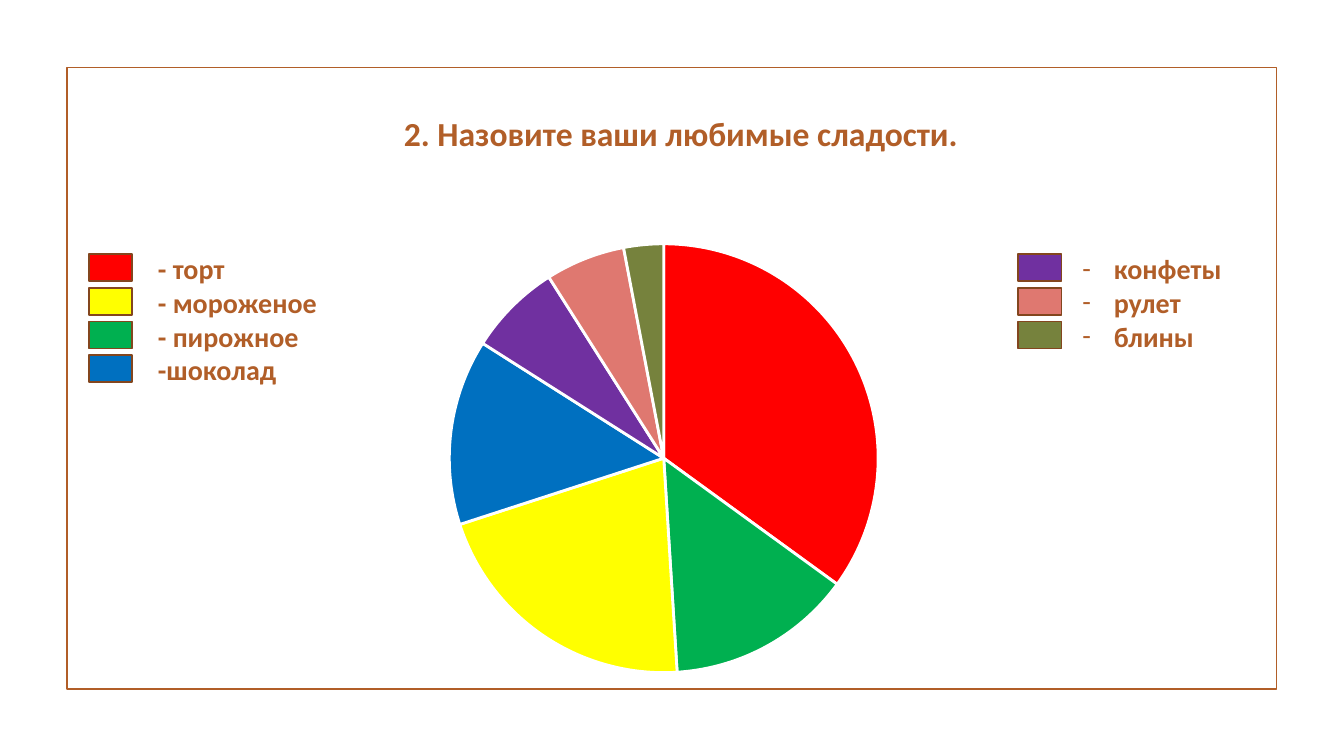
from dataclasses import dataclass
from lxml import etree
from pptx import Presentation
from pptx import util as u
from pptx.chart import data as cd
from pptx.dml import color as col
from pptx.enum import chart as ec, shapes as es, text as et
from pptx.oxml import ns

Pt = u.Pt


@dataclass
class Theme:
    font: str = "Calibri"
    ink: str = "B15E28"
    edge: str = "83461E"
    gap: str = "FFFFFF"
    label: str = "000000"
    head: int = 24
    body: int = 20
    small: int = 10
    line: float = 1.25
    slice: float = 2


T = Theme()
TITLE = "2. Назовите ваши любимые сладости."
SLICES = [
    ("1", 35, "FF0000"),
    ("2", 14, "00B050"),
    ("3", 21, "FFFF00"),
    ("4", 14, "0070C0"),
    ("5", 7, "7030A0"),
    ("6", 6, "DF7870"),
    ("7", 3, "76823D"),
]
LEFT = [("- торт", "FF0000"), ("- мороженое", "FFFF00"),
        ("- пирожное", "00B050"), ("-шоколад", "0070C0")]
RIGHT = [("конфеты", "7030A0"), ("рулет", "DF7870"), ("блины", "76823D")]
KEYS = [
    (LEFT, 63.4, (97.2, 176.4, 146.2, 259.2), 8.5, 0, False),
    (RIGHT, 727.2, (766.1, 176.4, 141.8, 80), 22.5, -22.5, True),
]
TOP, STEP, WIDE, TALL = 181.4, 24.1, 31, 19.4


def rgb(code):
    return col.RGBColor.from_string(code)


def block(slide, box, fill, line):
    shape = slide.shapes.add_shape(es.MSO_SHAPE.RECTANGLE, *map(Pt, box))
    shape.shadow.inherit = False
    if fill:
        shape.fill.solid()
        shape.fill.fore_color.rgb = rgb(fill)
    else:
        shape.fill.background()
    shape.line.color.rgb = rgb(line)
    shape.line.width = Pt(T.line)


def indent(para, left, first, dash):
    props = para._p.get_or_add_pPr()
    props.set("marL", str(Pt(left)))
    props.set("indent", str(Pt(first)))
    if dash:
        face = etree.SubElement(props, ns.qn("a:buFont"))
        face.set("typeface", T.font)
        mark = etree.SubElement(props, ns.qn("a:buChar"))
        mark.set("char", "-")


def write(slide, box, lines, size, align, left=0, first=0, dash=False):
    frame = slide.shapes.add_textbox(*map(Pt, box)).text_frame
    frame.word_wrap = True
    frame.text = "\n".join(lines)
    for para in frame.paragraphs:
        para.alignment = align
        indent(para, left, first, dash)
        for run in para.runs:
            run.font.name = T.font
            run.font.size = Pt(size)
            run.font.bold = True
            run.font.color.rgb = rgb(T.ink)


def pie(slide, box):
    data = cd.CategoryChartData(number_format="General")
    data.categories = [name for name, _, _ in SLICES]
    data.add_series("Series 1", [val for _, val, _ in SLICES])
    chart = slide.shapes.add_chart(
        ec.XL_CHART_TYPE.PIE, *map(Pt, box), data).chart
    chart.has_legend = False
    chart.has_title = False
    chart.font.name = T.font
    chart.font.size = Pt(T.small)
    chart.font.color.rgb = rgb(T.label)
    plot = chart.plots[0]
    plot.vary_by_categories = True
    for num, (_, _, fill) in enumerate(SLICES):
        form = plot.series[0].points[num].format
        form.fill.solid()
        form.fill.fore_color.rgb = rgb(fill)
        form.line.color.rgb = rgb(T.gap)
        form.line.width = Pt(T.slice)


def main():
    deck = Presentation()
    deck.slide_width, deck.slide_height = Pt(960), Pt(540)
    slide = deck.slides.add_slide(deck.slide_layouts[6])
    block(slide, (47.8, 48.2, 864, 444), None, T.ink)
    write(slide, (54, 77, 864.7, 36), [TITLE], T.head, et.PP_ALIGN.CENTER)
    pie(slide, (220.3, 164.2, 507.6, 326.2))
    for items, x, box, left, first, dash in KEYS:
        for row, (_, fill) in enumerate(items):
            block(slide, (x, TOP + row * STEP, WIDE, TALL), fill, T.edge)
        write(slide, box, [name for name, _ in items], T.body,
              et.PP_ALIGN.LEFT, left, first, dash)
    deck.save("out.pptx")


if __name__ == "__main__":
    main()
